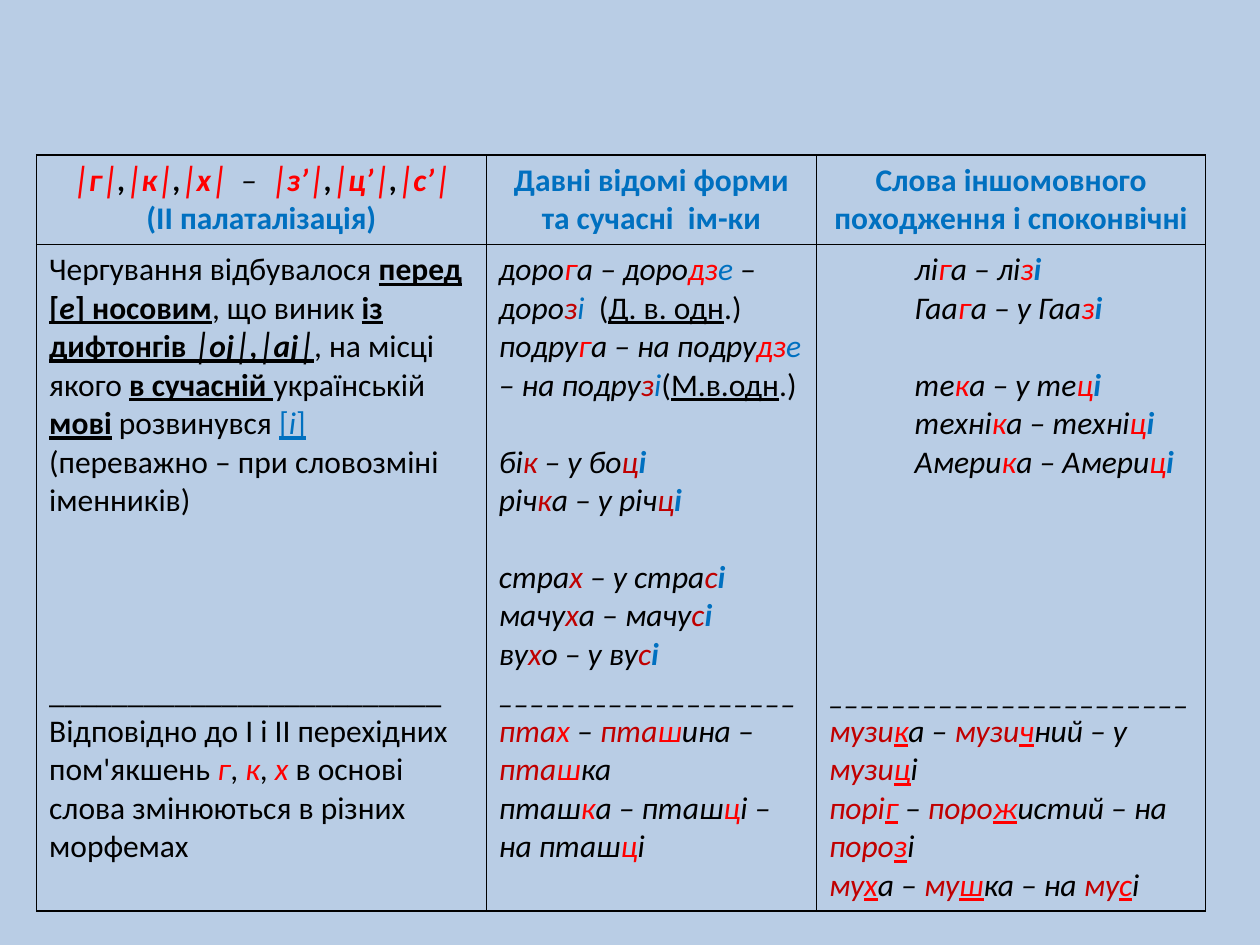
"""Build the slide with a table of Ukrainian consonant shifts."""
from lxml.etree import SubElement
from pptx import Presentation
from pptx.dml.color import RGBColor
from pptx.enum.text import PP_ALIGN
from pptx.oxml.ns import qn
from pptx.util import Inches, Pt

THEME = {
    "font": "Calibri", "size": 18, "line": 22, "back": "B9CDE5", "ink": "000000",
    "r": "FF0000", "d": "C00000", "a": "0070C0",
}
WIDTHS = (3.57, 2.62, 3.09)
HEIGHTS = (0.71, 4.97)
INDENT = 0.68

HEADS = (
    ["{ri:│г│}{i:,}{ri:│к│}{i:,}{ri:│х│}{bi:  –  }{ri:│з’│}{i:,}{ri:│ц’│}{i:,}{ri:│с’│}",
     "{a:(ІІ палаталізація)}"],
    ["{a:Давні відомі форми та сучасні  ім-ки}"],
    ["{a:Слова іншомовного походження і споконвічні}"],
)
RULES = [
    "Чергування відбувалося {bu:перед [}{bui:е}{bu:] носовим}, що виник "
    "{bu:із дифтонгів }{bui:│оj│,│aj│}, на місці якого {bu:в сучасній }українській "
    "{bu:мові} розвинувся {au:[}{aui:і}{au:]}",
    "(переважно – при словозміні іменників)",
    "_" * 25,
    "Відповідно до І і ІІ перехідних пом'якшень {ri:г}, {ri:к}, {ri:х} "
    "в основі слова змінюються в різних морфемах",
]
NATIVE = [
    "доро{r:г}а – доро{r:дз}{a:е }– доро{d:з}{a:і  }{i:(}{iu:Д. в. одн}{i:.)}",
    "подру{r:г}а – на подру{r:дз}{a:е }– на подру{d:з}{a:і}{i:(}{iu:М.в.одн}{i:.)}",
    "бі{d:к} – у бо{d:ц}{ab:і}",
    "річ{d:к}а – у річ{d:ц}{ab:і}",
    "стра{d:х} – у стра{d:с}{ab:і}",
    "мачу{d:х}а – мачу{d:с}{ab:і}",
    "ву{d:х}о – у ву{d:с}{ab:і}",
    "_" * 19,
    "{d:пта}{r:х }– {d:пта}{r:ш}ина –{d:пта}{r:ш}ка",
    "пташ{r:к}а – пташ{r:ц}і – на пташ{r:ц}і",
]
LOANS = [
    "лі{r:г}а – лі{r:з}{ab:і}",
    "Гаа{r:г}а – у Гаа{r:з}{ab:і}",
    "те{r:к}а – у те{r:ц}{ab:і}",
    "техні{r:к}а – техні{r:ц}{ab:і}",
    "Амери{r:к}а – Амери{r:ц}{ab:і}",
    "_" * 23,
    "{d:музи}{ru:к}а – {d:музи}{ru:ч}ний – у {d:музи}{ru:ц}і",
    "{d:порі}{ru:г} – {d:поро}{ru:ж}истий – на {d:поро}{ru:з}і",
    "{d:му}{ru:х}а – {d:му}{ru:ш}ка – на {d:му}{ru:с}і",
]
BODY = (
    (RULES, "", {2: 4}, 0),
    (NATIVE, "i", {2: 1, 4: 1}, 0),
    (LOANS, "i", {2: 1, 5: 5}, 5),
)


def add_text(para, text, base):
    """Add runs from marked text; each mark toggles the base style."""
    para.font.name = THEME["font"]
    para.font.size = Pt(THEME["size"])
    plain, *marked = text.split("{")
    parts = [("", plain)]
    for piece in marked:
        code, rest = piece.split(":", 1)
        inner, after = rest.split("}", 1)
        parts += [(code, inner), ("", after)]
    for code, words in parts:
        if words:
            style = set(base) ^ set(code)
            run = para.add_run()
            run.text = words
            run.font.bold = "b" in style
            run.font.italic = "i" in style
            run.font.underline = "u" in style
            tint = next((key for key in "rda" if key in style), "ink")
            run.font.color.rgb = RGBColor.from_string(THEME[tint])


def frame_cell(cell):
    """Give the cell black borders and no fill."""
    props = cell._tc.get_or_add_tcPr()
    for side in ("a:lnL", "a:lnR", "a:lnT", "a:lnB"):
        line = SubElement(props, qn(side), w=str(Pt(1)))
        fill = SubElement(line, qn("a:solidFill"))
        SubElement(fill, qn("a:srgbClr"), val=THEME["ink"])
    cell.fill.background()


deck = Presentation()
deck.slide_width, deck.slide_height = Inches(10), Inches(7.5)
slide = deck.slides.add_slide(deck.slide_layouts[6])
slide.background.fill.solid()
slide.background.fill.fore_color.rgb = RGBColor.from_string(THEME["back"])

table = slide.shapes.add_table(
    len(HEIGHTS), len(WIDTHS), Inches(0.29), Inches(1.23),
    Inches(sum(WIDTHS)), Inches(sum(HEIGHTS))).table
table.first_row = table.horz_banding = False
for column, width in zip(table.columns, WIDTHS):
    column.width = Inches(width)
for row, height in zip(table.rows, HEIGHTS):
    row.height = Inches(height)

heads = [(lines, "b", {}, 0) for lines in HEADS]
for row, group in enumerate((heads, BODY)):
    for col, (lines, base, gaps, inset) in enumerate(group):
        cell = table.cell(row, col)
        frame_cell(cell)
        frame = cell.text_frame
        for spot, text in enumerate(lines):
            para = frame.add_paragraph() if spot else frame.paragraphs[0]
            para.alignment = PP_ALIGN.LEFT if row else PP_ALIGN.CENTER
            if spot in gaps:
                para.space_before = Pt(gaps[spot] * THEME["line"])
            if spot < inset:
                para._p.get_or_add_pPr().set("marL", str(Inches(INDENT)))
            add_text(para, text, base)

deck.save("out.pptx")
